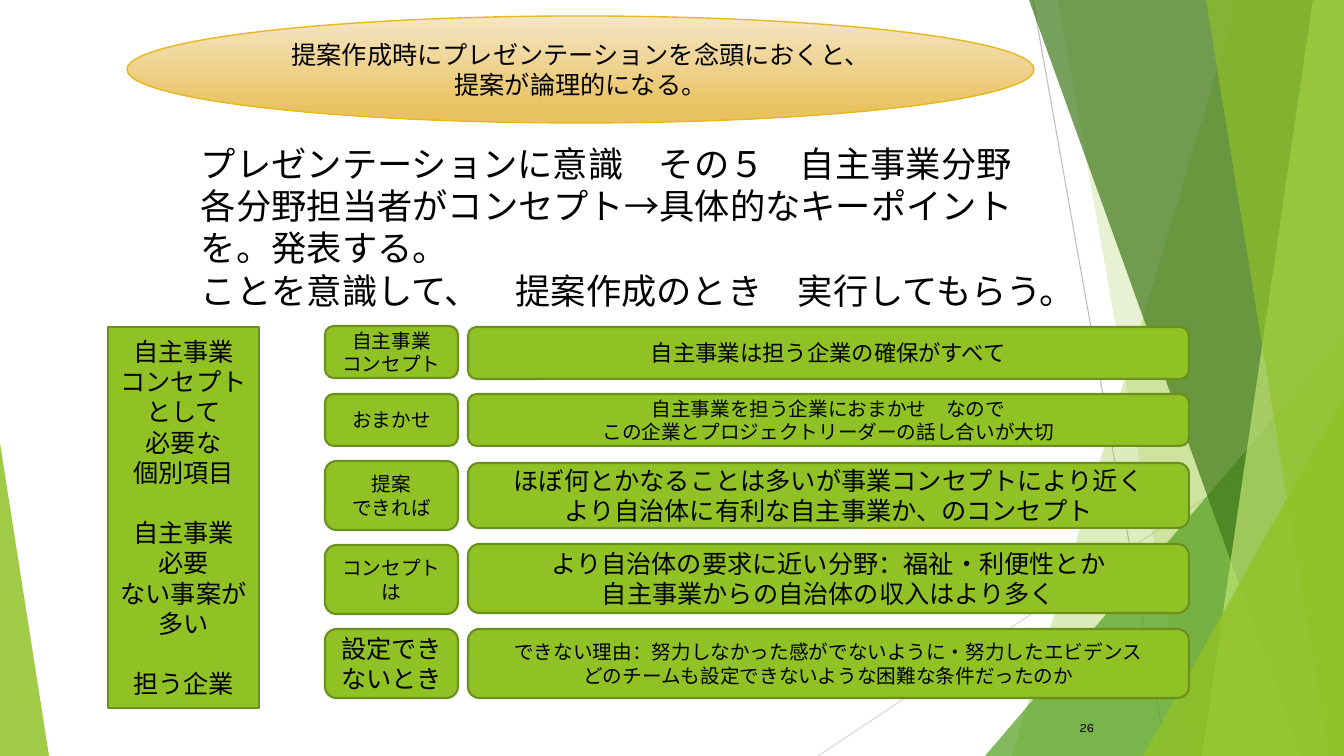
import pptx
import pptx.dml.color
import pptx.enum.shapes
import pptx.enum.text
import pptx.oxml
import pptx.oxml.ns
import pptx.util

SHAPES = pptx.enum.shapes.MSO_SHAPE
ALIGN = pptx.enum.text.PP_ALIGN
ANCHOR = pptx.enum.text.MSO_ANCHOR
EMU_PER_PX = 914400 / 100.8
WIDTH, HEIGHT = 1344, 756


def px(length):
    return pptx.util.Emu(round(length * EMU_PER_PX))


def color(value):
    return pptx.dml.color.RGBColor.from_string(value)


def add_xml(parent, tag, **attributes):
    parent.append(pptx.oxml.parse_xml(
        f'<a:{tag} {pptx.oxml.ns.nsdecls("a")} '
        + " ".join(f'{name}="{value}"' for name, value in attributes.items()) + "/>"))


class SlideBuilder:
    font = "Karla"
    ink = "000000"
    green = "90C226"
    outline = "6B901C"

    def __init__(self, deck):
        self.slide = deck.slides.add_slide(deck.slide_layouts[6])
        self.shapes = self.slide.shapes

    def line(self, start, end, stroke):
        connector = self.shapes.add_connector(
            pptx.enum.shapes.MSO_CONNECTOR.STRAIGHT, *map(px, start + end))
        connector.line.color.rgb = color(stroke)
        connector.line.width = pptx.util.Pt(0.75)
        add_xml(connector._element.spPr, "effectLst")

    def tint(self, shape, fill, opacity):
        """Fill a borderless shape with a see-through colour; opacity is in percent."""
        shape.shadow.inherit = False
        shape.line.fill.background()
        shape.fill.solid()
        shape.fill.fore_color.rgb = color(fill)
        add_xml(shape._element.spPr.find(".//" + pptx.oxml.ns.qn("a:srgbClr")),
                "alpha", val=opacity * 1000)

    def band(self, top_left, bottom_left, fill, opacity):
        """Draw a full-height band from a slanted left edge to the slide's right edge."""
        builder = self.shapes.build_freeform(top_left, 0, scale=EMU_PER_PX)
        builder.add_line_segments(
            [(WIDTH, 0), (WIDTH, HEIGHT), (bottom_left, HEIGHT)], close=True)
        self.tint(builder.convert_to_shape(), fill, opacity)

    def triangle(self, left, top, width, apex, fill, opacity):
        """Draw a triangle standing on the slide's bottom edge; apex runs from 0 to 1."""
        shape = self.shapes.add_shape(
            SHAPES.ISOSCELES_TRIANGLE, *map(px, (left, top, width, HEIGHT - top)))
        shape.adjustments[0] = apex
        self.tint(shape, fill, opacity)

    def set_text(self, shape, text, size, align, anchor):
        frame = shape.text_frame
        frame.word_wrap = True
        frame.vertical_anchor = anchor
        frame.text = text
        for para in frame.paragraphs:
            para.alignment = align
            for span in para.runs:
                span.font.name = self.font
                span.font.size = pptx.util.Pt(size)
                span.font.color.rgb = color(self.ink)

    def text(self, bounds, text, size, align=ALIGN.LEFT, anchor=ANCHOR.TOP):
        box = self.shapes.add_textbox(*map(px, bounds))
        self.set_text(box, text, size, align, anchor)

    def box(self, bounds, text, size, kind=SHAPES.ROUNDED_RECTANGLE):
        shape = self.shapes.add_shape(kind, *map(px, bounds))
        shape.shadow.inherit = False
        shape.fill.solid()
        shape.fill.fore_color.rgb = color(self.green)
        shape.line.color.rgb = color(self.outline)
        shape.line.width = pptx.util.Pt(1.5)
        self.set_text(shape, text, size, ALIGN.CENTER, ANCHOR.MIDDLE)
        return shape

    def banner(self, bounds, text, size):
        shape = self.box(bounds, text, size, SHAPES.OVAL)
        shape.fill.gradient()
        shape.fill.gradient_angle = 270
        stops = ((0, "F5E5C5"), (0.88, "E9C260"))
        for stop, (position, value) in zip(shape.fill.gradient_stops, stops):
            stop.position = position
            stop.color.rgb = color(value)
        shape.line.color.rgb = color("E6B91E")
        shape.line.width = pptx.util.Pt(1)


def draw_background(page):
    page.line((1033, 0), (1167, HEIGHT), "BFBFBF")
    page.line((WIDTH, 406), (818, HEIGHT), "D9D9D9")
    page.band(1238, 1012, "90C226", 30)
    page.band(1058, 1192, "90C226", 20)
    page.triangle(985, 336, 359, 1, "54A021", 72)
    page.band(1029, 1301, "3F7819", 70)
    page.band(1313, 1202, "C0E474", 70)
    page.band(1206, 1329, "90C226", 65)
    page.triangle(1143, 396, 201, 1, "90C226", 80)
    page.triangle(0, 443, 49, 0, "90C226", 85)


TITLE = ("プレゼンテーションに意識　その５　自主事業分野\v"
         "各分野担当者がコンセプト→具体的なキーポイント\v"
         "を。発表する。\v"
         "ことを意識して、　提案作成のとき　実行してもらう。")

ITEMS = "自主事業\nコンセプト\nとして\n必要な\n個別項目\n自主事業\n必要\nない事案が\n多い\n担う企業"
GROUP_STARTS = (5, 9)

# Each row: (top, height, text, size) of the label, then of the detail
ROWS = [
    ((326, 52, "自主事業\nコンセプト", 14),
     (327, 52, "自主事業は担う企業の確保がすべて", 16)),
    ((394, 52, "おまかせ", 14),
     (394, 52, "自主事業を担う企業におまかせ　なので\n"
               "この企業とプロジェクトリーダーの話し合いが大切", 14)),
    ((461, 69, "提案\nできれば", 14),
     (463, 65, "ほぼ何とかなることは多いが事業コンセプトにより近く\n"
               "より自治体に有利な自主事業か、のコンセプト", 18)),
    ((545, 69, "コンセプト\nは", 14),
     (544, 69, "より自治体の要求に近い分野：福祉・利便性とか\n"
               "自主事業からの自治体の収入はより多く", 18)),
    ((629, 69, "設定できないとき", 18),
     (629, 69, "できない理由：努力しなかった感がでないように・努力したエビデンス\n"
               "どのチームも設定できないような困難な条件だったのか", 14)),
]
COLUMNS = ((325, 133), (468, 721))


def main():
    deck = pptx.Presentation()
    deck.slide_width, deck.slide_height = px(WIDTH), px(HEIGHT)
    page = SlideBuilder(deck)
    draw_background(page)
    page.text((191, 137, 985, 165), TITLE, 25.2)
    page.text((1028, 708, 76, 40), "26", 9, ALIGN.RIGHT, ANCHOR.MIDDLE)

    items = page.box((108, 327, 151, 381), ITEMS, 18, SHAPES.RECTANGLE)
    for index in GROUP_STARTS:
        items.text_frame.paragraphs[index].space_before = pptx.util.Pt(21.6)

    for row in ROWS:
        for (left, width), (top, height, text, size) in zip(COLUMNS, row):
            page.box((left, top, width, height), text, size)

    page.banner((127, 16, 907, 107),
                "提案作成時にプレゼンテーションを念頭におくと、\n提案が論理的になる。", 18)
    deck.save("out.pptx")


if __name__ == "__main__":
    main()
